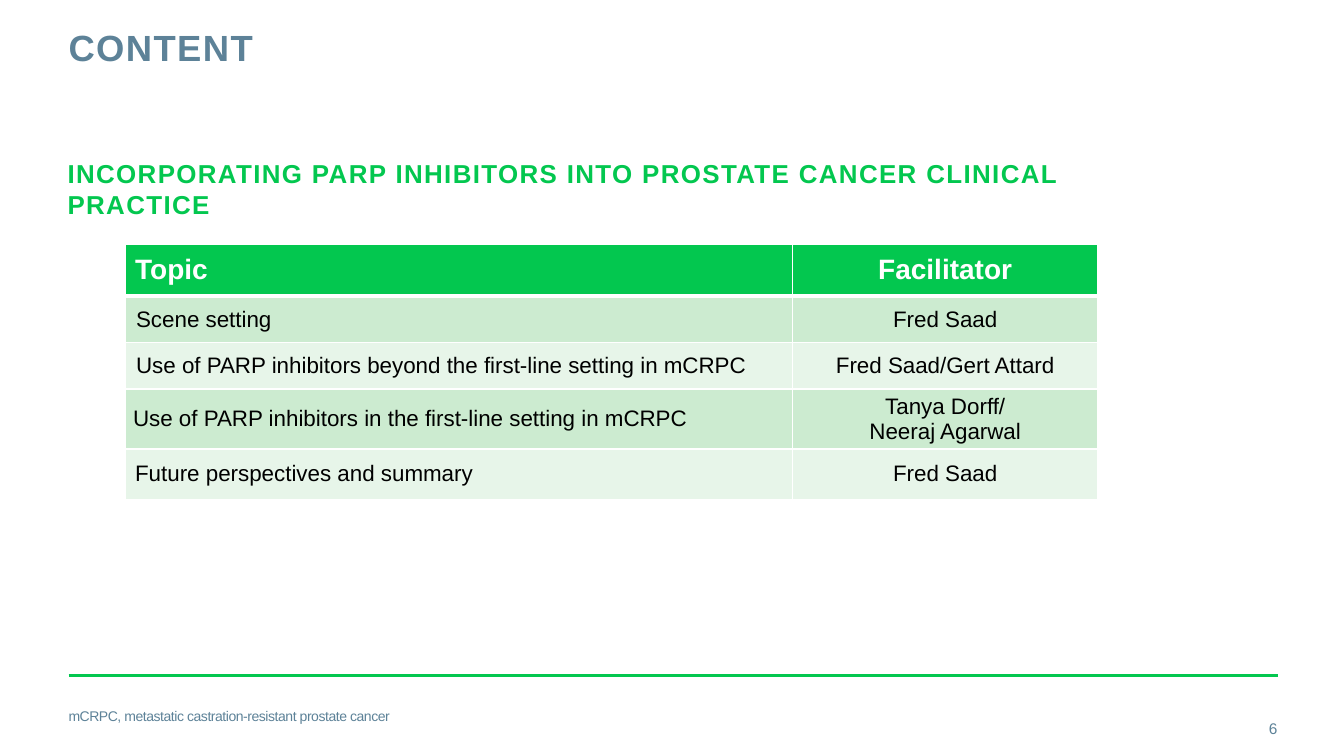
"""Build the agenda slide with its table of topics and facilitators."""
from lxml.etree import SubElement as Sub
from pptx import Presentation
from pptx.dml.color import RGBColor
from pptx.enum.text import MSO_ANCHOR as Anchor, MSO_AUTO_SIZE as Fit, PP_ALIGN as Align
from pptx.oxml.ns import qn
from pptx.util import Inches, Pt

GREEN = RGBColor(0x03, 0xC7, 0x4F)
SLATE = RGBColor(0x5D, 0x82, 0x98)
DARK = RGBColor(0xCC, 0xEB, 0xD0)
PALE = RGBColor(0xE7, 0xF5, 0xE9)
WHITE = RGBColor(0xFF, 0xFF, 0xFF)
BLACK = RGBColor(0, 0, 0)

ROWS = [
    ("Topic", "Facilitator"),
    ("Scene setting", "Fred Saad"),
    ("Use of PARP inhibitors beyond the first-line setting in mCRPC", "Fred Saad/Gert Attard"),
    ("Use of PARP inhibitors in the first-line setting in mCRPC", "Tanya Dorff/\nNeeraj Agarwal"),
    ("Future perspectives and summary", "Fred Saad"),
]
WIDTHS = (6.62, 3.03)
HEIGHTS = (0.52, 0.46, 0.46, 0.5, 0.5)
INDENTS = (0, 0.01, 0.01, 0.01, 0)


def apply(item, **form):
    for name, value in form.items():
        setattr(item, name, value)


def write(frame, text, size, color, bold=False, track=0, align=Align.LEFT, **form):
    para = frame.paragraphs[0]
    para.text = text
    apply(para, alignment=align, space_before=Pt(0), **form)
    for run in para.runs:
        apply(run.font, name="Arial", size=Pt(size), bold=bold)
        run.font.color.rgb = color
        if track:
            run._r.get_or_add_rPr().set("spc", str(track))
    return para


def place(shape, left, top, width, height, anchor):
    apply(shape, left=Inches(left), top=Inches(top), width=Inches(width), height=Inches(height))
    frame = shape.text_frame
    apply(frame, margin_left=0, margin_top=0, margin_right=0, margin_bottom=0,
          word_wrap=True, auto_size=Fit.NONE, vertical_anchor=anchor)
    return frame


def add_box(slide, *area):
    return place(slide.shapes.add_textbox(0, 0, 0, 0), *area, Anchor.MIDDLE)


def add_rule(slide):
    left, right, top = Inches(0.68), Inches(12.68), Inches(6.7)
    rule = slide.shapes.add_connector(1, left, top, right, top)
    rule.line.color.rgb = GREEN
    rule.line.width = Pt(2)
    Sub(rule._element.spPr, qn("a:effectLst"))


def set_edges(cell, above, below):
    props = cell._tc.get_or_add_tcPr()
    for side, width in zip("LRTB", (1, 1, above, below)):
        edge = Sub(props, qn(f"a:ln{side}"), w=str(Pt(width)))
        fill = Sub(edge, qn("a:solidFill"))
        Sub(fill, qn("a:srgbClr"), val=str(WHITE))


def add_table(slide):
    area = (Inches(n) for n in (1.24, 2.42, sum(WIDTHS), sum(HEIGHTS)))
    table = slide.shapes.add_table(len(ROWS), len(WIDTHS), *area).table
    for col, width in zip(table.columns, WIDTHS):
        col.width = Inches(width)
    for i, row in enumerate(ROWS):
        table.rows[i].height = Inches(HEIGHTS[i])
        head = i == 0
        for j, text in enumerate(row):
            cell = table.cell(i, j)
            set_edges(cell, 3 if i == 1 else 1, 3 if head else 1)
            cell.fill.solid()
            cell.fill.fore_color.rgb = GREEN if head else DARK if i % 2 else PALE
            cell.vertical_anchor = Anchor.MIDDLE
            para = write(cell.text_frame, text, 20 if head else 16, WHITE if head else BLACK,
                         head, align=Align.CENTER if j else Align.LEFT)
            if not j and INDENTS[i]:
                para._p.get_or_add_pPr().set("marL", str(Inches(INDENTS[i])))
    apply(table.cell(3, 0), margin_left=Inches(0.07), margin_right=Inches(0.07))


def main():
    deck = Presentation()
    apply(deck, slide_width=Inches(13.33), slide_height=Inches(7.5))
    slide = deck.slides.add_slide(deck.slide_layouts[1])
    title, body = slide.placeholders
    add_rule(slide)
    frame = place(title, 0.68, 0.27, 9.56, 0.88, Anchor.TOP)
    write(frame, "CONTENT", 26, SLATE, True, 100, line_spacing=Pt(30))
    frame = place(body, 0.67, 1.56, 10.22, 0.77, Anchor.TOP)
    para = write(frame, "INCORPORATING PARP INHIBITORS INTO PROSTATE CANCER CLINICAL PRACTICE",
                 18.5, GREEN, True, 100)
    props = para._p.get_or_add_pPr()
    apply_indent = {"marL": "0", "indent": "0"}
    props.attrib.update(apply_indent)
    Sub(props, qn("a:buNone"))
    add_table(slide)
    write(add_box(slide, 0.68, 6.9, 11.13, 0.4),
          "mCRPC, metastatic castration-resistant prostate cancer", 10, SLATE, track=-30)
    write(add_box(slide, 11.81, 7.03, 0.86, 0.4), "6", 11, SLATE, align=Align.RIGHT)
    deck.save("out.pptx")


if __name__ == "__main__":
    main()
